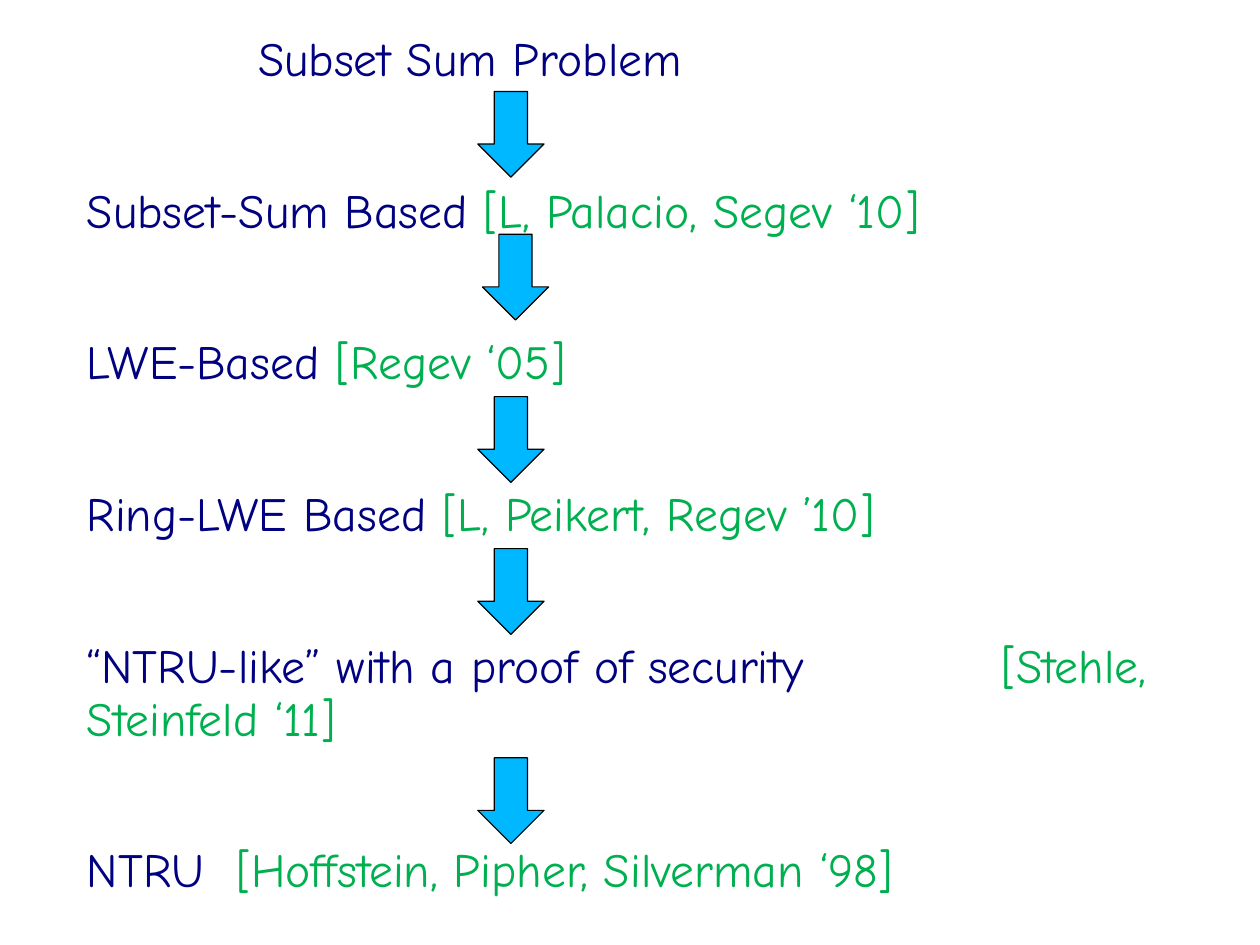
from lxml import etree
from pptx import Presentation
from pptx import util as u
from pptx.dml.color import RGBColor
from pptx.enum import shapes, text
from pptx.oxml.ns import qn

NAVY, GREEN, SKY, BLACK = "000080", "00B050", "00B8FF", "000000"
FONT = "Comic Neue"
CM_PER_INCH = 2.54
PAGE = (28 / CM_PER_INCH, 21 / CM_PER_INCH)

# Reduction chain: (problem or scheme, citation, left indent)
CHAIN = [
    ("Subset Sum Problem", "", 1.5),
    ("Subset-Sum Based ", "[L, Palacio, Segev ‘10]", 0),
    ("LWE-Based ", "[Regev ‘05]", 0),
    ("Ring-LWE Based ", "[L, Peikert, Regev ’10]", 0),
    ("“NTRU-like” with a proof of security\t\t\t\t",
     "[Stehle, Steinfeld ‘11]", 0),
    ("NTRU  ", "[Hoffstein, Pipher, Silverman ‘98]", 0),
]
# Arrows between the steps: (left, top)
ARROWS = [(4.18, 0.8), (4.22, 2.05), (4.18, 3.47), (4.18, 4.8), (4.18, 6.63)]
ARROW_SIZE = (0.58, 0.75)


def color(hex_string):
    return RGBColor.from_string(hex_string)


def format_step(step, indent):
    props = step._p.get_or_add_pPr()
    props.set("marL", str(u.Inches(indent)))
    props.set("indent", "0")
    etree.SubElement(props, qn("a:buNone"))
    step.alignment = text.PP_ALIGN.LEFT
    step.line_spacing = 0.93
    step.space_before = u.Pt(0)
    step.space_after = u.Pt(62)


def add_words(step, words, hex_string):
    run = step.add_run()
    run.text = words
    run.font.name = FONT
    run.font.size = u.Pt(30)
    run.font.color.rgb = color(hex_string)


def add_arrow(slide, left, top):
    arrow = slide.shapes.add_shape(
        shapes.MSO_SHAPE.DOWN_ARROW,
        *(u.Inches(n) for n in (left, top, *ARROW_SIZE)))
    arrow.shadow.inherit = False
    arrow.fill.solid()
    arrow.fill.fore_color.rgb = color(SKY)
    arrow.line.color.rgb = color(BLACK)
    arrow.line.width = u.Pt(0.75)


def main():
    deck = Presentation()
    deck.slide_width, deck.slide_height = (u.Inches(n) for n in PAGE)
    slide = deck.slides.add_slide(deck.slide_layouts[1])
    title = slide.shapes.title
    title._element.getparent().remove(title._element)

    # Body list of the chain
    body = slide.placeholders[1]
    body.left, body.top, body.width, body.height = (
        u.Inches(n) for n in (0.76, 0.27, 9.71, 5.36))
    frame = body.text_frame
    frame.margin_left = frame.margin_right = frame.margin_bottom = 0
    frame.margin_top = u.Inches(0.03)
    frame.vertical_anchor = text.MSO_ANCHOR.TOP
    frame.auto_size = text.MSO_AUTO_SIZE.NONE
    frame.word_wrap = True
    for i, (name, citation, indent) in enumerate(CHAIN):
        step = frame.add_paragraph() if i else frame.paragraphs[0]
        format_step(step, indent)
        add_words(step, name, NAVY)
        if citation:
            add_words(step, citation, GREEN)

    # Arrows from each step to the next
    for left, top in ARROWS:
        add_arrow(slide, left, top)

    deck.save("out.pptx")


if __name__ == "__main__":
    main()
